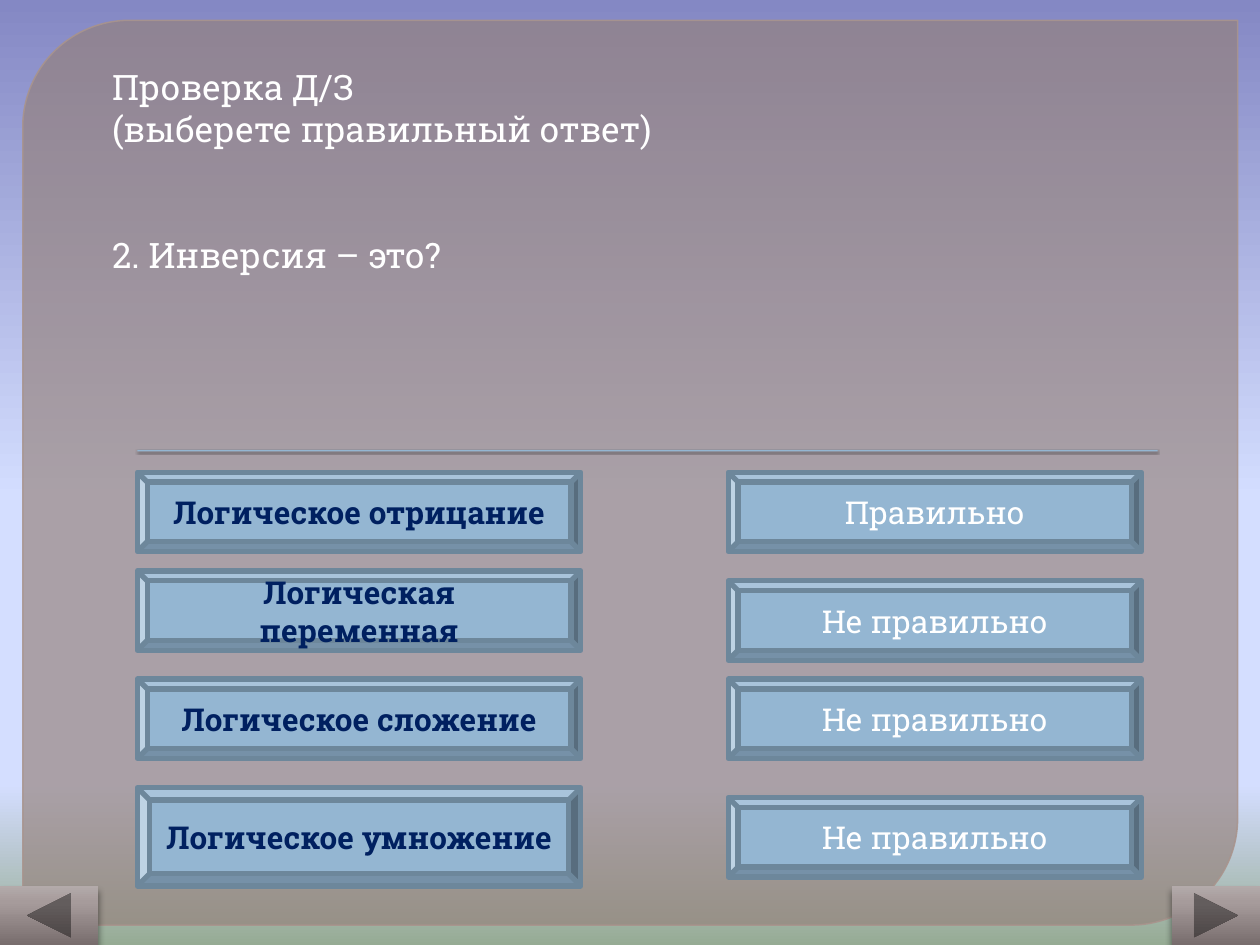
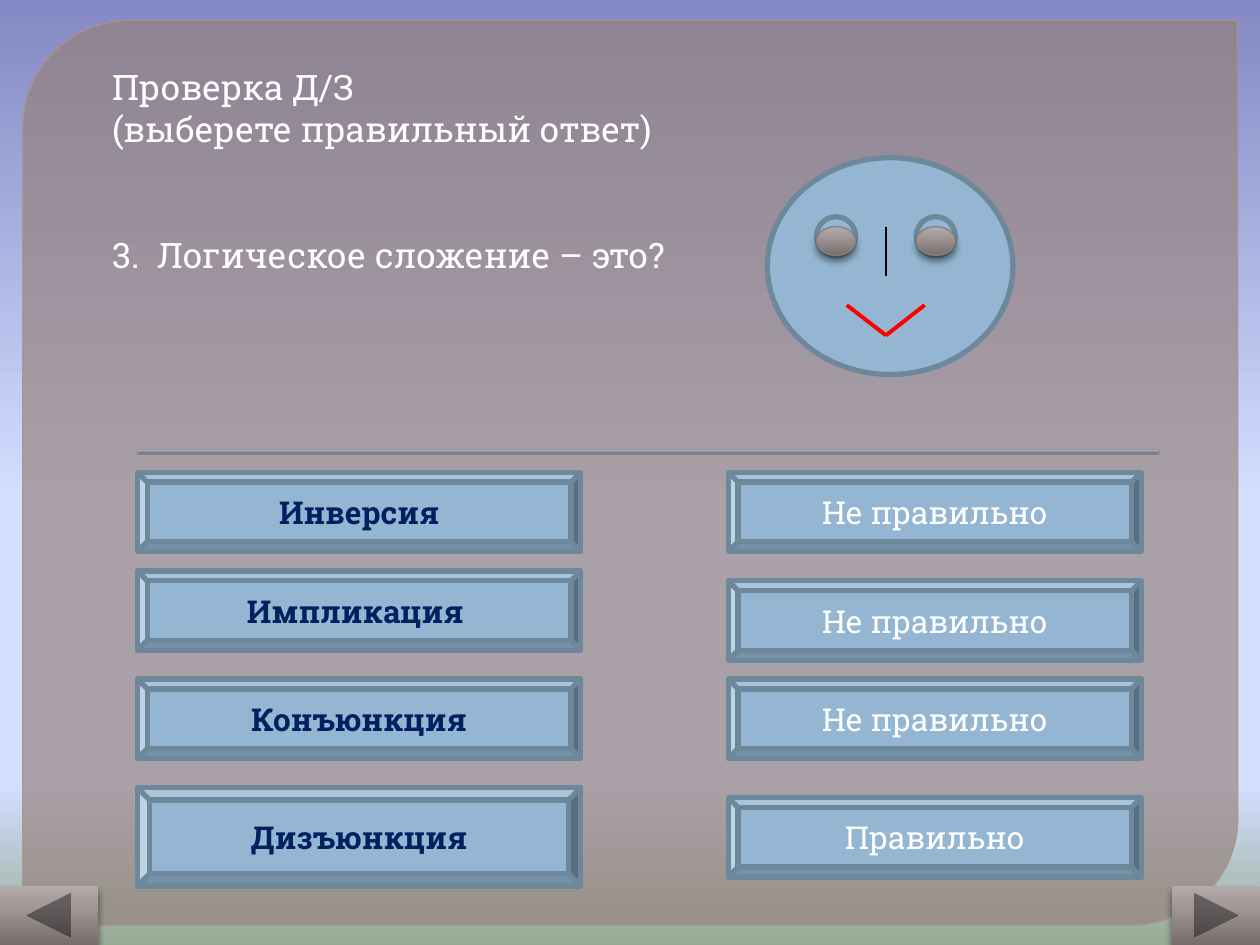
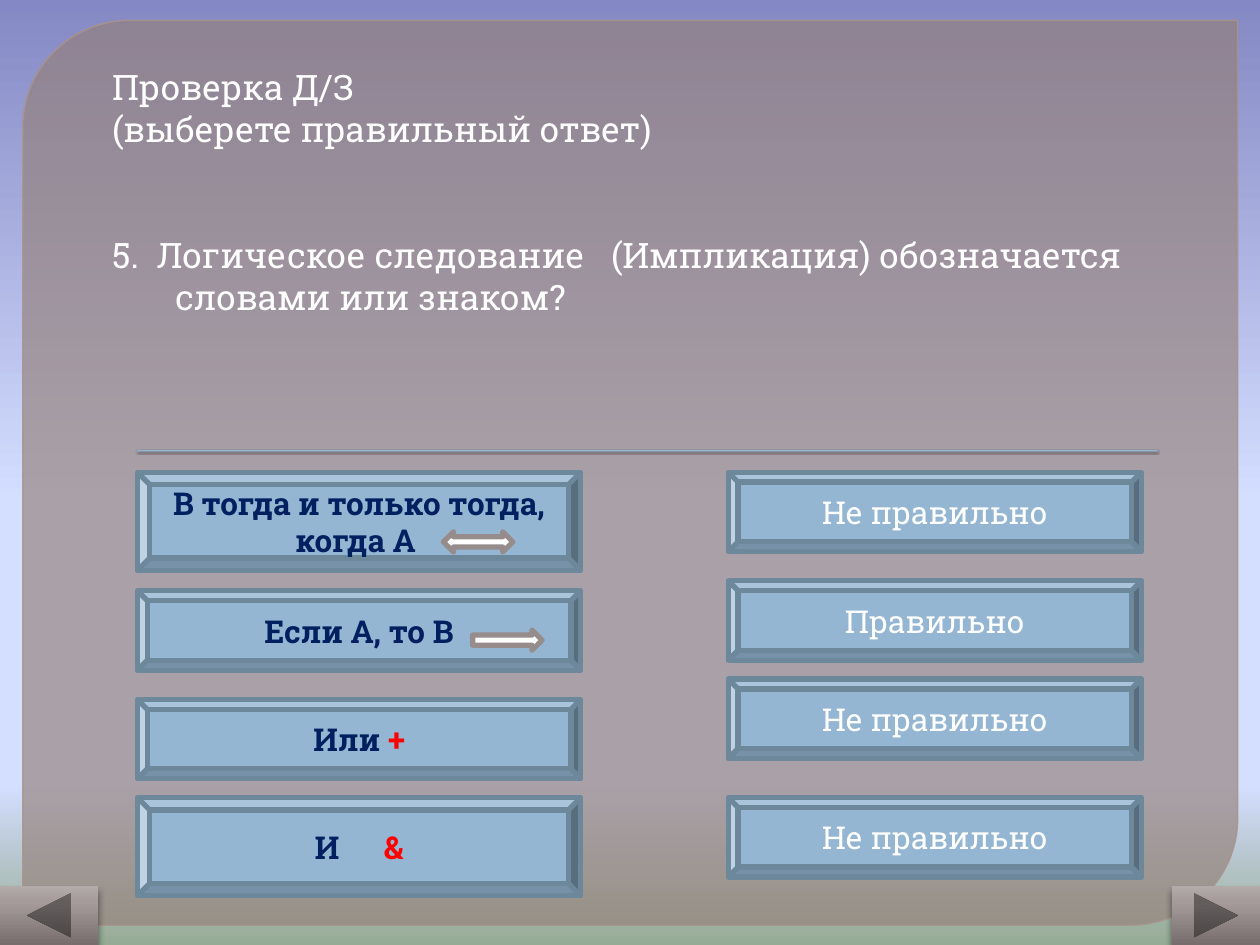
from dataclasses import dataclass
from typing import Any, NamedTuple

from lxml.etree import SubElement as Sub
from pptx import Presentation
from pptx.dml.color import RGBColor as RGB
from pptx.enum.shapes import MSO_CONNECTOR as LINK, MSO_SHAPE as KIND
from pptx.enum.text import MSO_ANCHOR as ANCHOR, MSO_AUTO_SIZE as FIT, PP_ALIGN as ALIGN
from pptx.oxml.ns import qn
from pptx.util import Cm, Pt

HUES = {
    "white": "FFFFFF", "black": "000000", "red": "FF0000", "navy": "002060",
    "blue": "94B6D2", "steel": "6D879B", "panel": "948079", "edge": "A9948D",
    "gray": "968C8C", "rim": "887F7F",
}
SKY = ((0, "8488C4"), (53, "D4DEFF"), (83, "D4DEFF"), (100, "96AB94"))
METAL = ((0, "786D6D"), (72, "A69B9B"), (100, "B3AAAA"))
FONT = "Roboto Slab"
BODY = {"name": FONT, "size": Pt(20)}
ANSWER = {"name": FONT, "size": Pt(18)}
OPTION = ANSWER | {"bold": True}
HEAD = ("Проверка Д/З", "(выберете правильный ответ)")
RIGHT, WRONG = "Правильно", "Не правильно"

LEFT, MID = 2.77, 14.68
WIDE, SLIM = 8.94, 8.33
LOW, TALL = 1.6, 1.98
TOPS = (9.52, 11.71, 13.69, 16.08)


class Box(NamedTuple):
    left: float
    top: float
    width: float
    height: float


class Glow(NamedTuple):
    alpha: int
    blur: float
    dist: float


class Bit(NamedTuple):
    text: str
    hue: str = ""
    gap: float = 0


@dataclass(frozen=True)
class Look:
    kind: KIND
    fill: str = ""
    line: str = ""
    width: float = 3
    glow: Glow | None = None


@dataclass(frozen=True)
class Choice:
    bits: tuple[Bit, ...]
    top: float
    height: float = LOW
    arrow: KIND | None = None
    place: Box | None = None


@dataclass(frozen=True)
class Quiz:
    ask: tuple[Bit, ...]
    right: int
    choices: tuple[Choice, ...]
    face: bool = False


SHADE = Glow(43, 4, 3)
PLATE = Look(KIND.BEVEL, "blue", "steel")
DISC = Look(KIND.FLOWCHART_CONNECTOR, "blue", "steel")
PUPIL = Look(KIND.FLOWCHART_CONNECTOR, "", "rim", 0.75, SHADE)
PANEL = Look(KIND.ROUND_2_DIAG_RECTANGLE, "panel", "edge", 0.87)
RULE = Look(KIND.RECTANGLE, "blue", glow=Glow(75, 1, 1))
NAV = (
    (Look(KIND.ACTION_BUTTON_FORWARD_OR_NEXT, glow=SHADE), Box(23.62, 17.86, 1.78, 1.19)),
    (Look(KIND.ACTION_BUTTON_BACK_OR_PREVIOUS, glow=SHADE), Box(0, 17.86, 1.98, 1.19)),
)
EYES = (16.46, 18.47)
CHIN = (17.86, 6.76)
STROKES = (
    ((17.86, 4.57), (17.86, 5.56), "black", 1.5),
    ((17.07, 6.15), CHIN, "red", 2.25),
    ((18.64, 6.15), CHIN, "red", 2.25),
)


def stack(*names: str) -> tuple[Choice, ...]:
    """Place four plain options in the usual column."""
    rows = zip(names, (9.52, 11.51, 13.69, 15.88), (LOW, LOW, LOW, TALL))
    return tuple(Choice((Bit(name),), top, high) for name, top, high in rows)


QUIZZES = (
    Quiz((Bit("2. Инверсия – это?"),), 0,
         stack("Логическое отрицание", "Логическая переменная",
               "Логическое сложение", "Логическое умножение")),
    Quiz((Bit("3."), Bit(" ", gap=5), Bit("Логическое сложение – это?")), 3,
         stack("Инверсия", "Импликация ", "Конъюнкция", "Дизъюнкция"), face=True),
    Quiz((Bit("5."), Bit(" ", gap=5), Bit("Логическое следование"), Bit(" ", gap=10),
          Bit("(Импликация) обозначается словами или знаком?")), 1,
         (Choice((Bit("В тогда и только тогда, когда А "),), 9.52, TALL,
                 KIND.LEFT_RIGHT_ARROW, Box(8.94, 10.72, 1.4, 0.41)),
          Choice((Bit("Если А, то В"),), 11.91, LOW,
                 KIND.RIGHT_ARROW, Box(9.53, 12.7, 1.4, 0.41)),
          Choice((Bit("Или "), Bit("+", "red")), 14.1),
          Choice((Bit("И"), Bit(" ", gap=21), Bit("&", "red")), 16.08, TALL))),
)


def paint(name: str) -> RGB:
    return RGB.from_string(HUES[name])


def setup(item: Any, values: dict[str, Any]) -> None:
    for key, value in values.items():
        setattr(item, key, value)


def blend(fill: Any, root: Any, stops: tuple, angle: int) -> None:
    """Give the fill, which lies under root, a gradient with these stops."""
    fill.gradient()
    fill.gradient_angle = angle
    ramp = next(root.iter(qn("a:gsLst")))
    for old in list(ramp):
        ramp.remove(old)
    for pos, code in stops:
        stop = Sub(ramp, qn("a:gs"), pos=str(pos * 1000))
        Sub(stop, qn("a:srgbClr"), val=code)


def cast(shape: Any, glow: Glow) -> None:
    """Add a shadow that falls straight down."""
    box = next(shape.element.iter(qn("a:effectLst")))
    outer = Sub(box, qn("a:outerShdw"), blurRad=str(Pt(glow.blur)),
                dist=str(Pt(glow.dist)), dir="5400000", rotWithShape="0")
    tint = Sub(outer, qn("a:srgbClr"), val=HUES["black"])
    Sub(tint, qn("a:alpha"), val=str(glow.alpha * 1000))


def draw(shapes: Any, look: Look, box: Box) -> Any:
    shape = shapes.add_shape(look.kind, *map(Cm, box))
    shape.shadow.inherit = False
    if look.fill:
        shape.fill.solid()
        shape.fill.fore_color.rgb = paint(look.fill)
    else:
        blend(shape.fill, shape.element, METAL, 90)
    if look.line:
        shape.line.color.rgb = paint(look.line)
        shape.line.width = Pt(look.width)
    else:
        shape.line.fill.background()
    if look.glow:
        cast(shape, look.glow)
    return shape


def write(para: Any, bits: tuple[Bit, ...], form: dict[str, Any], hue: str) -> None:
    for bit in bits:
        run = para.add_run()
        run.text = bit.text
        setup(run.font, form)
        run.font.color.rgb = paint(bit.hue or hue)
        if bit.gap:
            run.font._element.set("spc", str(round(bit.gap * 100)))


def plate(shapes: Any, box: Box, bits: tuple[Bit, ...], form: dict[str, Any], hue: str) -> None:
    frame = draw(shapes, PLATE, box).text_frame
    setup(frame, {"word_wrap": True, "vertical_anchor": ANCHOR.MIDDLE})
    para = frame.paragraphs[0]
    para.alignment = ALIGN.CENTER
    write(para, bits, form, hue)


def dress(layout: Any, shapes: Any) -> None:
    """Draw the panel and the rule, then move them to the layout, behind all else."""
    blend(layout.background.fill, layout.element, SKY, 270)
    panel = draw(shapes, PANEL, Box(0.46, 0.41, 24.49, 18.24))
    panel.adjustments[0] = 0.118
    tints = panel.element.spPr.iter(qn("a:srgbClr"))
    for tint, alpha in zip(list(tints), (65, 88)):
        Sub(tint, qn("a:alpha"), val=str(alpha * 1000))
    rule = draw(shapes, RULE, Box(LEFT, 9.07, 20.57, 0.03))
    for spot, shape in enumerate((panel, rule)):
        shape.element.nvSpPr.cNvPr.set("id", str(20 + spot))
        layout.shapes.element.insert(2 + spot, shape.element)


def fill_body(body: Any, ask: tuple[Bit, ...]) -> None:
    setup(body, dict(zip(Box._fields, map(Cm, (2.01, 1.19, 21.59, 16.66)))))
    frame = body.text_frame
    setup(frame, {
        "margin_left": Cm(0.25), "margin_right": Cm(0.36),
        "margin_top": Cm(0.13), "margin_bottom": Cm(0.13),
        "word_wrap": True, "auto_size": FIT.NONE, "vertical_anchor": ANCHOR.TOP,
    })
    rows = [((Bit(line),), 0, 0) for line in HEAD] + [(ask, 48, 1.27)]
    for spot, (bits, before, hang) in enumerate(rows):
        para = frame.add_paragraph() if spot else frame.paragraphs[0]
        setup(para, {"space_before": Pt(before), "space_after": Pt(0),
                     "line_spacing": 1.0, "alignment": ALIGN.LEFT})
        props = para._p.get_or_add_pPr()
        props.set("marL", str(Cm(hang)))
        props.set("indent", str(-Cm(hang)))
        Sub(props, qn("a:buNone"))
        write(para, bits, BODY, "white")


def add_choice(shapes: Any, choice: Choice) -> None:
    if choice.arrow:
        shapes = shapes.add_group_shape().shapes
    box = Box(LEFT, choice.top, WIDE, choice.height)
    plate(shapes, box, choice.bits, OPTION, "navy")
    if choice.arrow:
        draw(shapes, Look(choice.arrow, "white", "gray"), choice.place)


def add_face(slide: Any) -> None:
    shapes = slide.shapes.add_group_shape().shapes
    draw(shapes, DISC, Box(15.47, 3.18, 4.95, 4.37))
    for left in EYES:
        draw(shapes, DISC, Box(left, 4.37, 0.79, 0.79))
    for start, end, hue, width in STROKES:
        line = shapes.add_connector(LINK.STRAIGHT, *map(Cm, start + end))
        line.line.color.rgb = paint(hue)
        line.line.width = Pt(width)
        Sub(line.element.spPr, qn("a:effectLst"))
    for left in EYES:
        draw(shapes, PUPIL, Box(left, 4.57, 0.79, 0.58))


def add_quiz(slide: Any, quiz: Quiz) -> None:
    title = slide.shapes.title.element
    title.getparent().remove(title)
    fill_body(slide.placeholders[1], quiz.ask)
    for spot, top in enumerate(TOPS):
        word = RIGHT if spot == quiz.right else WRONG
        plate(slide.shapes, Box(MID, top, SLIM, LOW), (Bit(word),), ANSWER, "white")
    for choice in quiz.choices:
        add_choice(slide.shapes, choice)
    for look, box in NAV:
        draw(slide.shapes, look, box)
    if quiz.face:
        add_face(slide)


def main() -> None:
    deck = Presentation()
    setup(deck, {"slide_width": Cm(25.4), "slide_height": Cm(19.05)})
    layout = deck.slide_layouts[1]
    slides = [deck.slides.add_slide(layout) for _ in QUIZZES]
    dress(layout, slides[0].shapes)
    for slide, quiz in zip(slides, QUIZZES):
        add_quiz(slide, quiz)
    deck.save("out.pptx")


if __name__ == "__main__":
    main()
